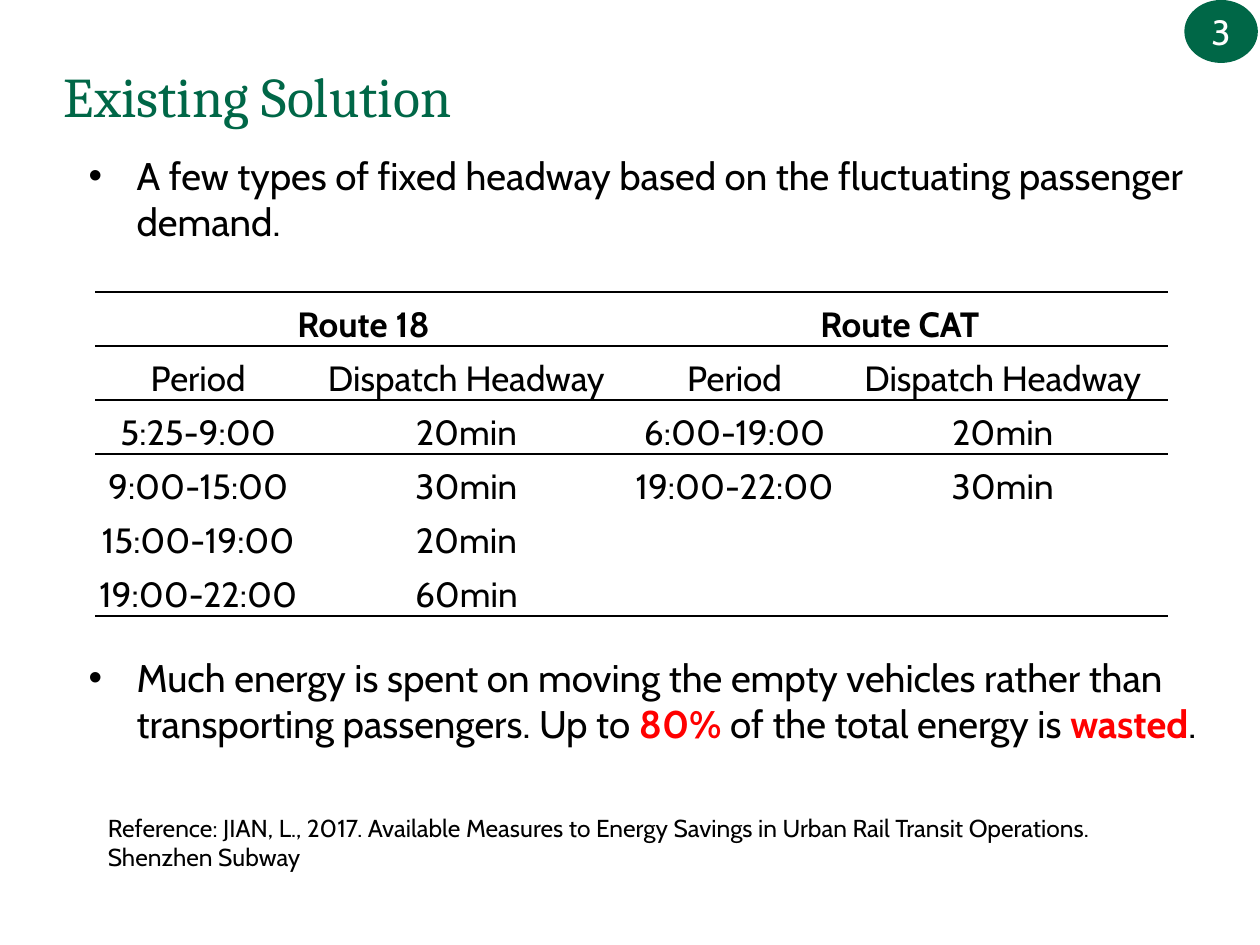
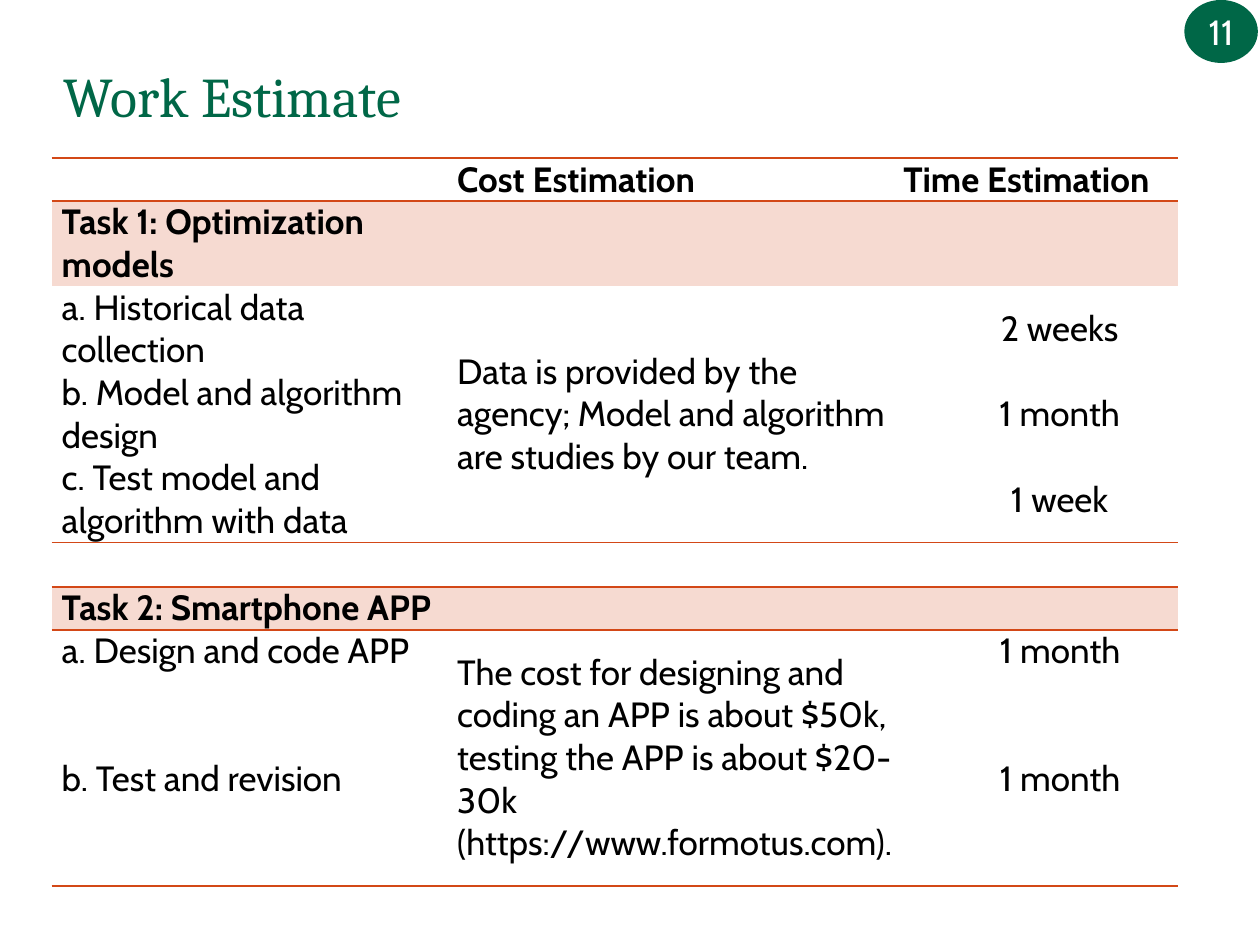
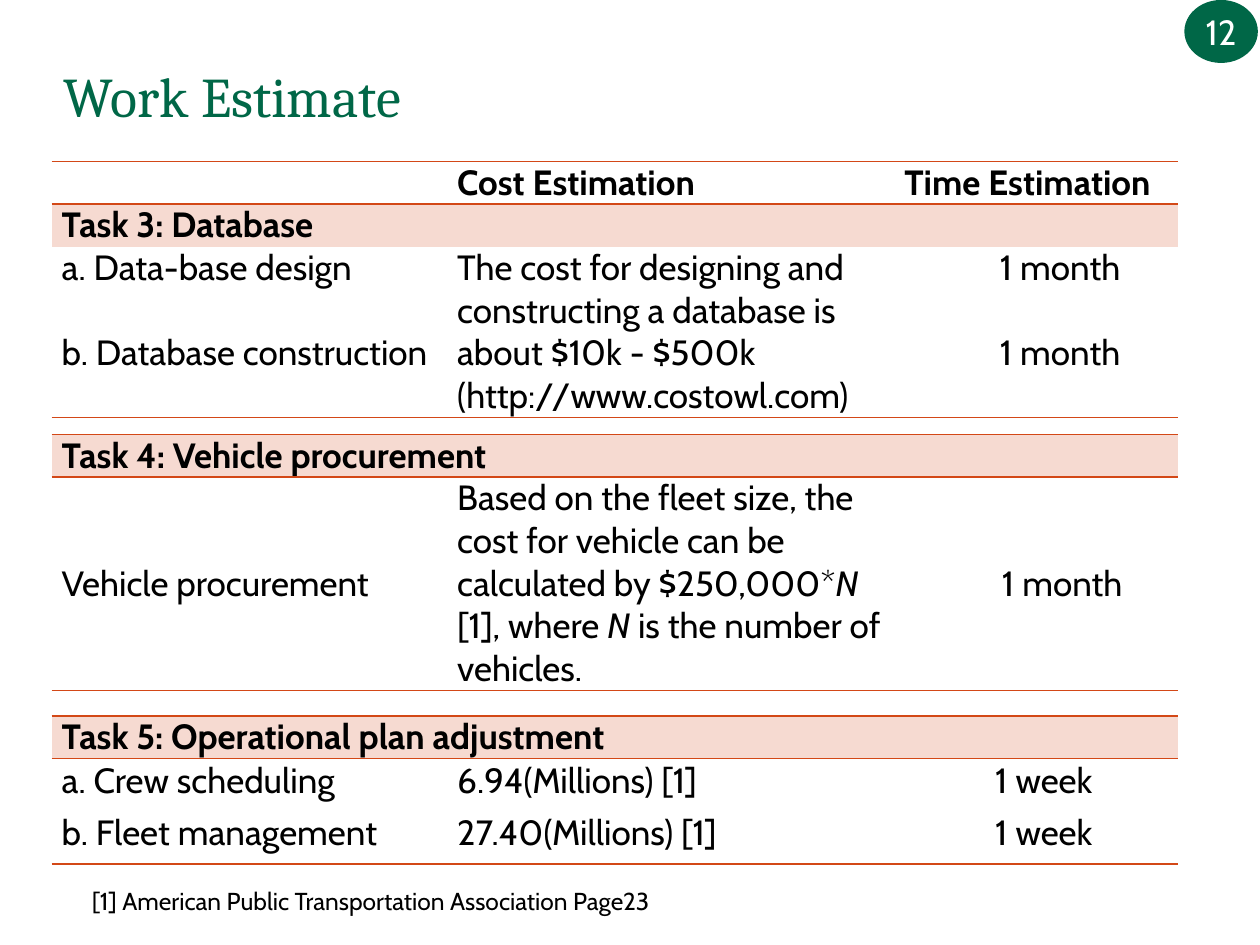
from lxml.etree import SubElement
from pptx import Presentation
from pptx.dml.color import RGBColor
from pptx.enum.shapes import MSO_SHAPE as Shape
from pptx.enum.text import MSO_ANCHOR as Anchor, PP_ALIGN as Align
from pptx.oxml.ns import qn
from pptx.util import Pt

GREEN, ORANGE, BLUSH = "006747", "D34817", "F6DAD1"
BLACK, WHITE, RED = "000000", "FFFFFF", "FF0000"
BODY, HEADING = "Cabin", "Cambria"
LINE = 24.4
CENTRED = (Align.CENTER, 0, 0)
FLUSH = (Align.LEFT, 5.76, 0)
DURATION = (Align.CENTER, 5.76, 21.6)
ESTIMATE_HEADER = [None, "Cost Estimation", "Time Estimation"]


def colour(code):
    """Turn a hex string into a colour."""
    return RGBColor.from_string(code)


def add_spans(para, text, size, font=BODY, tint=BLACK, bold=False):
    """Add a string, or a list of strings and (string, look) pairs, run by run."""
    for part in [text] if isinstance(text, str) else text:
        words, look = (part, {}) if isinstance(part, str) else part
        span = para.add_run()
        span.text = words
        span.font.name, span.font.size = font, Pt(size)
        span.font.bold = look.get("bold", bold)
        span.font.italic = look.get("italic", False)
        span.font.color.rgb = colour(look.get("tint", tint))


def indent(para, left, first):
    """Set the left margin and first-line indent of a paragraph."""
    props = para._p.get_or_add_pPr()
    props.set("marL", str(Pt(left)))
    props.set("indent", str(Pt(first)))
    return props


def set_margins(target, left, top, right, bottom):
    """Set the inner margins of a cell or text frame."""
    target.margin_left, target.margin_top = Pt(left), Pt(top)
    target.margin_right, target.margin_bottom = Pt(right), Pt(bottom)


def set_borders(cell, top, bottom):
    """Draw the borders of a cell that have a colour and clear the others."""
    props = cell._tc.get_or_add_tcPr()
    for side, code in (("L", None), ("R", None), ("T", top), ("B", bottom)):
        line = SubElement(props, qn(f"a:ln{side}"), w=str(Pt(1)))
        if code:
            SubElement(SubElement(line, qn("a:solidFill")), qn("a:srgbClr"), val=code)
        else:
            SubElement(line, qn("a:noFill"))


class Builder:
    """Hold the deck and its current page and draw elements in the shared style."""

    def __init__(self):
        """Open an empty deck of 10 by 7.5 inches."""
        self.deck = Presentation()
        self.deck.slide_width, self.deck.slide_height = Pt(720), Pt(540)
        self.page = None

    def start_page(self, number, title):
        """Add a page with its number badge and title."""
        self.page = self.deck.slides.add_slide(self.deck.slide_layouts[6])
        badge = self.page.shapes.add_shape(Shape.OVAL, Pt(676.8), Pt(0), Pt(42), Pt(36))
        badge.shadow.inherit = False
        badge.fill.solid()
        badge.fill.fore_color.rgb = colour(GREEN)
        badge.line.fill.background()
        frame = badge.text_frame
        frame.word_wrap = False
        frame.vertical_anchor = Anchor.MIDDLE
        set_margins(frame, 0, 0, 0, 0)
        frame.paragraphs[0].alignment = Align.CENTER
        add_spans(frame.paragraphs[0], str(number), 20, tint=WHITE)
        heading = self.text(29.5, 18.7, 612, 62, title, 32, HEADING, GREEN)
        heading.vertical_anchor = Anchor.BOTTOM
        set_margins(heading, 7.2, 3.6, 7.2, 7.2)

    def text(self, left, top, width, height, text, size, font=BODY, tint=BLACK):
        """Add a wrapped text box and return its frame."""
        box = self.page.shapes.add_textbox(Pt(left), Pt(top), Pt(width), Pt(height))
        box.text_frame.word_wrap = True
        add_spans(box.text_frame.paragraphs[0], text, size, font, tint)
        return box.text_frame

    def bullet(self, top, text):
        """Add a text box with one bulleted paragraph."""
        frame = self.text(30, top, 682, 60.5, text, 22)
        props = indent(frame.paragraphs[0], 41, -27.4)
        SubElement(props, qn("a:buFont"), typeface="Arial")
        SubElement(props, qn("a:buChar"), char="•")

    def table(self, left, top, widths, heights, rows, styles, rules, rule_tint,
              merges=(), bold=(), tinted=(), anchor=Anchor.MIDDLE, margins=(0, 0, 0, 0)):
        """Add a table ruled at the given row edges; bold rows take the first column's style."""
        frame = self.page.shapes.add_table(len(rows), len(widths), Pt(left), Pt(top),
                                           Pt(sum(widths)), Pt(sum(heights)))
        grid = frame.table
        grid.first_row = grid.horz_banding = False
        for column, width in zip(grid.columns, widths):
            column.width = Pt(width)
        for row, height in zip(grid.rows, heights):
            row.height = Pt(height)
        for first_row, first_col, last_row, last_col in merges:
            grid.cell(first_row, first_col).merge(grid.cell(last_row, last_col))
        for r, row in enumerate(rows):
            for c, text in enumerate(row):
                cell = grid.cell(r, c)
                end = r + (cell.span_height if cell.is_merge_origin else 1)
                set_borders(cell, rule_tint if r in rules else None,
                            rule_tint if end in rules else None)
                cell.fill.solid()
                cell.fill.fore_color.rgb = colour(BLUSH if r in tinted else WHITE)
                cell.vertical_anchor = anchor
                set_margins(cell, *margins)
                if text:
                    para = cell.text_frame.paragraphs[0]
                    align, margin, first = styles[0 if r in bold else c]
                    para.alignment = align
                    indent(para, margin, first)
                    add_spans(para, text, 20, bold=r in bold)

    def estimate(self, top, cost_width, heights, rows, rules, merges=(), time=DURATION):
        """Add a work estimate table whose task row is tinted."""
        task = 1 if rows[0] is ESTIMATE_HEADER else 0
        widths = (226, cost_width, 643.7 - 226 - cost_width)
        self.table(29.5, top, widths, heights, rows, (FLUSH, FLUSH, time), rules, ORANGE,
                   merges, bold=range(task + 1), tinted=(task,))


def existing_solution(builder):
    """Build the page on fixed headways."""
    builder.start_page(3, "Existing Solution")
    builder.bullet(83.5, "A few types of fixed headway based on the fluctuating passenger demand.")
    rows = [
        ["Route 18", None, "Route CAT", None],
        ["Period", "Dispatch Headway"] * 2,
        ["5:25-9:00", "20min", "6:00-19:00", "20min"],
        ["9:00-15:00", "30min", "19:00-22:00", "30min"],
        ["15:00-19:00", "20min", None, None],
        ["19:00-22:00", "60min", None, None],
    ]
    builder.table(54.5, 167, (117.5, 189) * 2, [30.86] * 6, rows, [CENTRED] * 4,
                  (0, 1, 2, 3, 6), BLACK, merges=((0, 0, 0, 1), (0, 2, 0, 3)), bold=(0,),
                  anchor=Anchor.BOTTOM, margins=(1.44, 1.44, 1.44, 0))
    strong = {"bold": True, "tint": RED}
    builder.bullet(370, [
        "Much energy is spent on moving the empty vehicles rather than "
        "transporting passengers. Up to ",
        ("80%", strong), " of the total energy is ", ("wasted", strong), "."])
    builder.text(54.5, 461, 627, 41, "Reference: JIAN, L., 2017. Available Measures to Energy "
                 "Savings in Urban Rail Transit Operations. Shenzhen Subway", 14)


def model_and_app_estimate(builder):
    """Build the page with the estimates of tasks 1 and 2."""
    builder.start_page(11, "Work Estimate")
    builder.estimate(90.4, 255, [LINE] + [2 * LINE] * 4, [
        ESTIMATE_HEADER,
        ["Task 1: Optimization models", None, None],
        ["a. Historical data collection", "Data is provided by the agency; Model and "
         "algorithm are studies by our team.", "2 weeks"],
        ["b. Model and algorithm design", None, "1 month"],
        ["c. Test model and algorithm with data", None, "1 week"],
    ], (0, 1, 5), merges=((2, 1, 4, 1),))
    builder.estimate(335.5, 255.5, (LINE, LINE, 5 * LINE), [
        ["Task 2: Smartphone APP", None, None],
        ["a. Design and code APP", "The cost for designing and coding an APP is about $50k, "
         "testing the APP is about $20-30k (https://www.formotus.com).", "1 month"],
        ["b. Test and revision", None, "1 month"],
    ], (0, 1, 3), merges=((1, 1, 2, 1),))


def operations_estimate(builder):
    """Build the page with the estimates of tasks 3 to 5."""
    builder.start_page(12, "Work Estimate")
    builder.estimate(92.2, 255.6, (LINE, LINE, LINE, 3 * LINE), [
        ESTIMATE_HEADER,
        ["Task 3: Database", None, None],
        ["a. Data-base design", "The cost for designing and constructing a database is about "
         "$10k - $500k (http://www.costowl.com)", "1 month"],
        ["b. Database construction", None, "1 month"],
    ], (0, 1, 4), merges=((2, 1, 3, 1),))
    italic = {"italic": True}
    builder.estimate(248.2, 258, (LINE, 5 * LINE), [
        ["Task 4: Vehicle procurement", None, None],
        ["Vehicle procurement", [
            "Based on the fleet size, the cost for vehicle can be calculated by $250,000*",
            ("N ", italic), "[1], where ", ("N", italic), " is the number of vehicles."],
         "1 month"],
    ], (0, 1, 2), merges=((0, 0, 0, 2),))
    builder.estimate(409, 258.5, (LINE, 25.2, 35.2), [
        ["Task 5: Operational plan adjustment", None, None],
        ["a. Crew scheduling", "6.94(Millions) [1]", "1 week"],
        ["b. Fleet management", "27.40(Millions) [1]", "1 week"],
    ], (0, 1, 3), merges=((0, 0, 0, 1),), time=(Align.CENTER, 5.76, 0))
    builder.text(45.4, 502.6, 627, 24.5,
                 "[1] American Public Transportation Association Page23", 14)


def main():
    """Build and save the deck."""
    builder = Builder()
    existing_solution(builder)
    model_and_app_estimate(builder)
    operations_estimate(builder)
    builder.deck.save("out.pptx")


if __name__ == "__main__":
    main()
